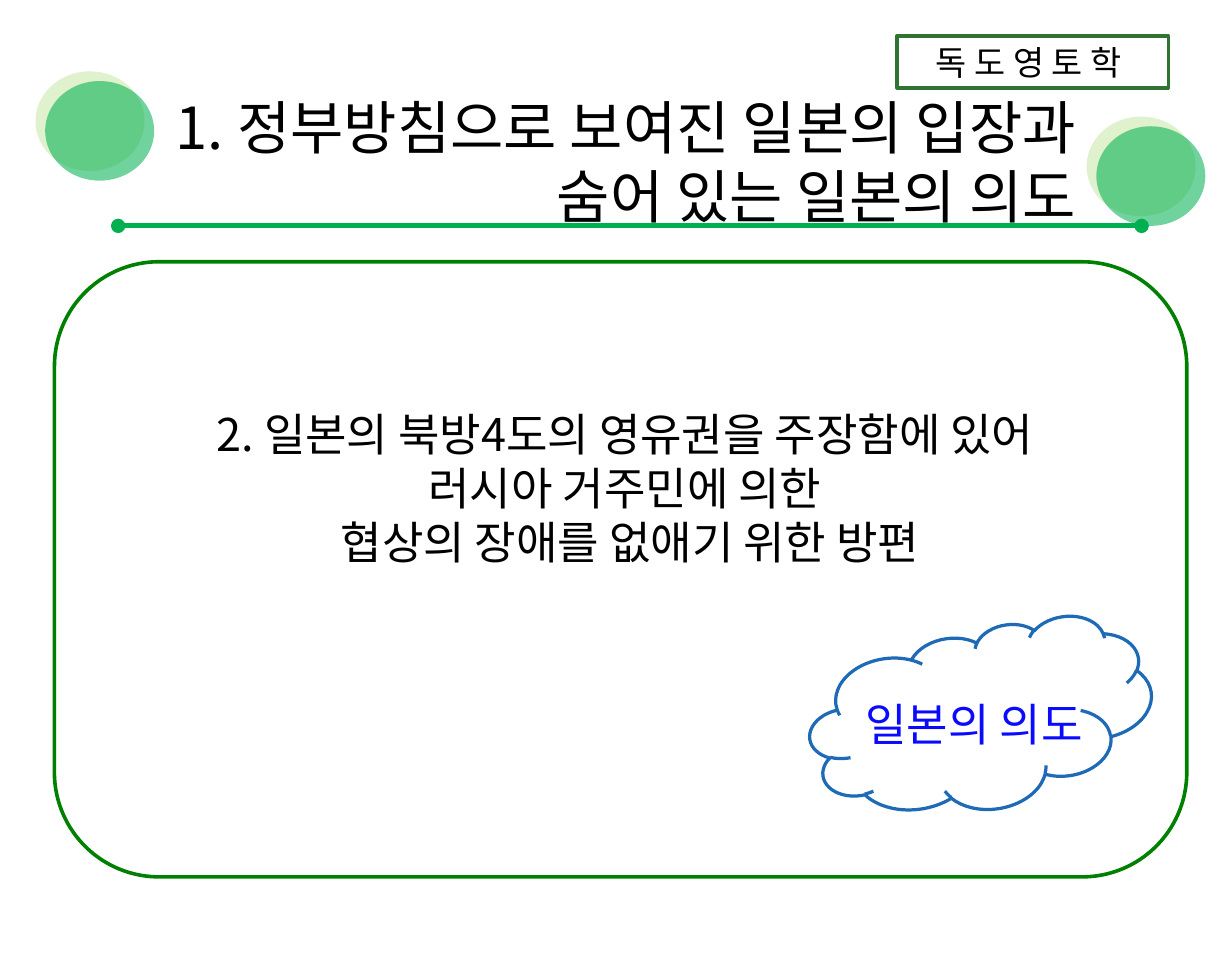
import pptx
import pptx.util
from pptx.dml.color import RGBColor
from pptx.enum.shapes import MSO_CONNECTOR, MSO_SHAPE
from pptx.enum.text import MSO_ANCHOR, PP_ALIGN
from pptx.oxml import parse_xml
from pptx.oxml.ns import nsdecls
from pptx.oxml.xmlchemy import OxmlElement

PX = 9144  # 100 px to the inch
FONT = "Noto Sans CJK KR"
BLACK = RGBColor(0x00, 0x00, 0x00)
WHITE = RGBColor(0xFF, 0xFF, 0xFF)
GREEN = RGBColor(0x00, 0xB0, 0x50)
FRAME_GREEN = RGBColor(0x00, 0x80, 0x00)
LABEL_GREEN = RGBColor(0x30, 0x74, 0x33)
CLOUD_BLUE = RGBColor(0x1E, 0x6A, 0xB6)
TEXT_BLUE = RGBColor(0x0A, 0x0A, 0xFF)


def px(*lengths):
    return [n * PX for n in lengths]


def add_shape(shapes, kind, box, fill=None, alpha=100, line=None, width=0):
    """Add a preset shape; alpha is the opacity of the fill in percent."""
    sp = shapes.add_shape(kind, *px(*box))
    sp.shadow.inherit = False
    if fill is None:
        sp.fill.background()
    else:
        sp.fill.solid()
        sp.fill.fore_color.rgb = fill
        if alpha < 100:
            color = sp._element.spPr.find(".//" + pptx.oxml.ns.qn("a:srgbClr"))
            opacity = OxmlElement("a:alpha")
            opacity.set("val", str(alpha * 1000))
            color.append(opacity)
    if line is None:
        sp.line.fill.background()
    else:
        sp.line.color.rgb = line
        sp.line.width = pptx.util.Pt(width)
    return sp


def add_ball(shapes, x, y):
    """Add a translucent green ball with a pale shadow at its upper left."""
    sp = add_shape(shapes, MSO_SHAPE.OVAL, (x, y, 94, 86), GREEN, 56)
    effects = sp._element.spPr.find(pptx.oxml.ns.qn("a:effectLst"))
    effects.append(parse_xml(
        f'<a:outerShdw {nsdecls("a")} blurRad="0" dist="107950" dir="13500000" '
        'algn="ctr" rotWithShape="0"><a:srgbClr val="92D050">'
        '<a:alpha val="50000"/></a:srgbClr></a:outerShdw>'))


def add_rule(shapes, x1, y1, x2, y2):
    """Add a green line with a dot at each end."""
    rule = shapes.add_connector(MSO_CONNECTOR.STRAIGHT, *px(x1, y1, x2, y2))
    rule.line.color.rgb = GREEN
    rule.line.width = pptx.util.Pt(3)
    for tag in ("a:headEnd", "a:tailEnd"):
        end = OxmlElement(tag)
        end.set("type", "oval")
        rule.line._get_or_add_ln().append(end)
    rule._element.spPr.append(OxmlElement("a:effectLst"))


def set_text(sp, text, size, color=BLACK, align=PP_ALIGN.CENTER):
    tf = sp.text_frame
    tf.word_wrap = True
    tf.vertical_anchor = MSO_ANCHOR.TOP
    tf.text = text
    for p in tf.paragraphs:
        p.alignment = align
        p.line_spacing = pptx.util.Pt(round(size * 1.2, 1))
        for r in p.runs:
            r.font.size = pptx.util.Pt(size)
            r.font.color.rgb = color
            r.font.name = FONT
            east_asian = OxmlElement("a:ea")
            east_asian.set("typeface", FONT)
            r._r.get_or_add_rPr().append(east_asian)


def add_text(shapes, box, text, size, **style):
    set_text(shapes.add_textbox(*px(*box)), text, size, **style)


def add_cloud(shapes):
    group = shapes.add_group_shape().shapes
    cloud = add_shape(group, MSO_SHAPE.CLOUD, (698, 543, 297, 156),
                      WHITE, 50, CLOUD_BLUE, 2)
    cloud.rotation = -8.3
    add_text(group, (727, 596, 227, 57), "일본의 의도", 28, color=TEXT_BLUE)


def main():
    prs = pptx.Presentation()
    prs.slide_width, prs.slide_height = px(1063, 827)
    s = prs.slides.add_slide(prs.slide_layouts[6])
    shapes = s.shapes

    add_ball(shapes, 39, 70)
    add_rule(shapes, 102, 195, 985, 195)
    add_ball(shapes, 946, 109)
    add_text(shapes, (141, 74, 797, 131),
             "1. 정부방침으로 보여진 일본의 입장과 숨어 있는 일본의 의도",
             36, align=PP_ALIGN.RIGHT)

    frame = add_shape(shapes, MSO_SHAPE.ROUNDED_RECTANGLE, (47, 226, 977, 531),
                      line=FRAME_GREEN, width=2.25)
    frame.adjustments[0] = 0.17
    label = add_shape(shapes, MSO_SHAPE.RECTANGLE, (774, 31, 234, 45),
                      WHITE, line=LABEL_GREEN, width=2)
    set_text(label, "독 도 영 토 학 ", 21)
    add_text(shapes, (149, 346, 789, 151),
             "2. 일본의 북방4도의 영유권을 주장함에 있어 \n"
             "러시아 거주민에 의한 \n"
             "협상의 장애를 없애기 위한 방편", 28)
    add_cloud(shapes)
    prs.save("out.pptx")


if __name__ == "__main__":
    main()
